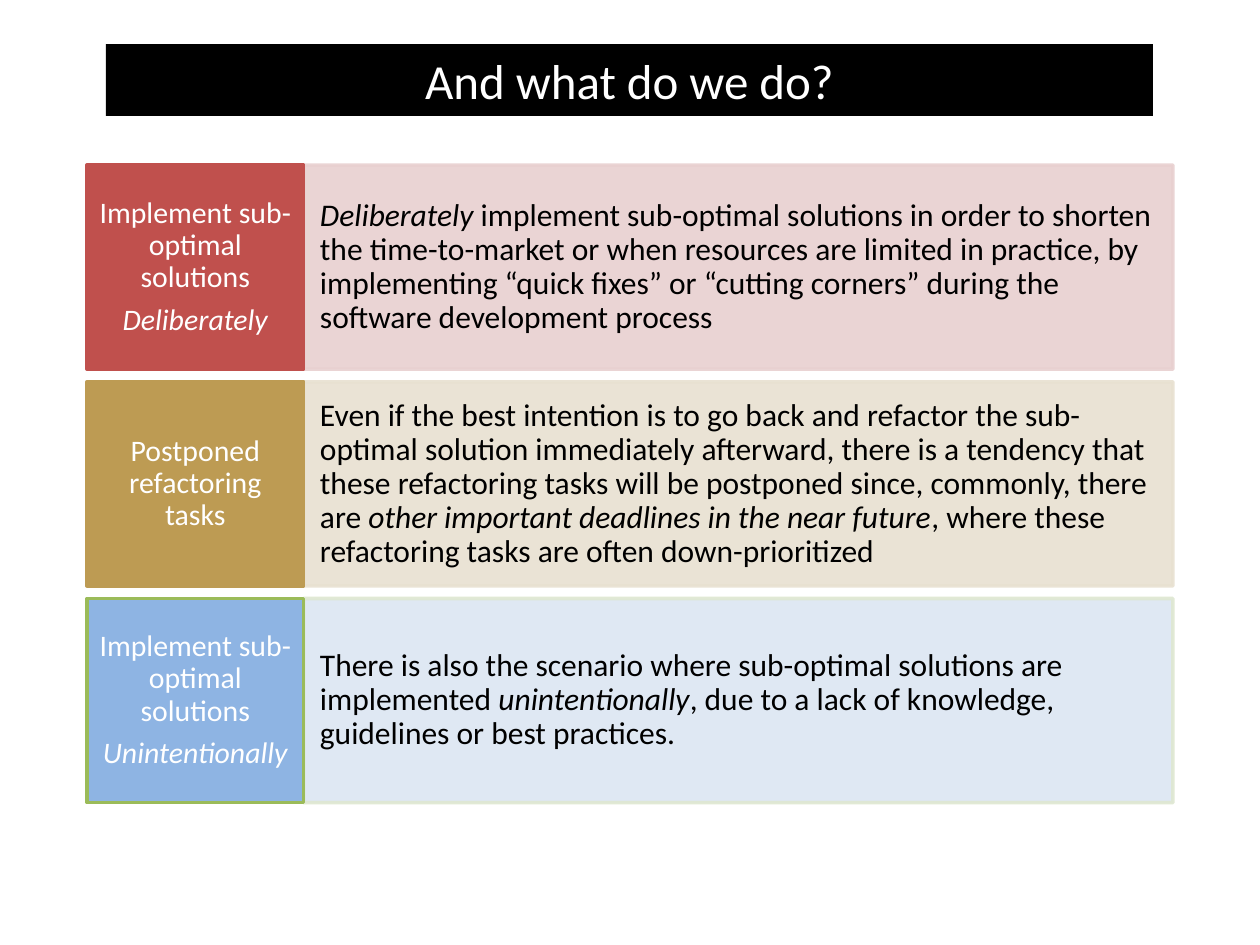
"""Build a slide with three labelled rows on how sub-optimal solutions arise."""
import lxml.etree
import pptx
import pptx.dml.color
import pptx.enum.shapes
import pptx.enum.text
import pptx.oxml.ns
import pptx.util
from pptx.util import Inches

RGBColor = pptx.dml.color.RGBColor
ALIGN = pptx.enum.text.PP_ALIGN

BLACK = RGBColor(0x00, 0x00, 0x00)
WHITE = RGBColor(0xFF, 0xFF, 0xFF)
RED = RGBColor(0xC0, 0x50, 0x4D)
PALE_RED = RGBColor(0xE8, 0xD0, 0xD0)
GOLD = RGBColor(0xBD, 0x9B, 0x53)
PALE_GOLD = RGBColor(0xE8, 0xE1, 0xD1)
BLUE = RGBColor(0x8E, 0xB4, 0xE3)
PALE_BLUE = RGBColor(0xDC, 0xE6, 0xF2)
GREEN = RGBColor(0x9B, 0xBB, 0x59)
PALE_GREEN = RGBColor(0xDE, 0xE7, 0xD1)

FONT = "Calibri"
LEFT, TOP = 0.69, 1.31
LABEL_WIDTH, DETAIL_WIDTH = 1.72, 6.9
ROW_HEIGHT, ROW_STEP = 1.62, 1.72


def write_text(shape, paragraphs, size, color, align, line_spacing=1.0, space_after=0, margin=0.1):
    """Fill a shape with paragraphs, each a list of (text, italic) runs."""
    frame = shape.text_frame
    frame.word_wrap = True
    frame.auto_size = pptx.enum.text.MSO_AUTO_SIZE.NONE
    frame.vertical_anchor = pptx.enum.text.MSO_ANCHOR.MIDDLE
    frame.margin_left = frame.margin_right = Inches(margin)
    frame.margin_top = frame.margin_bottom = Inches(0.05)
    for index, runs in enumerate(paragraphs):
        paragraph = frame.add_paragraph() if index else frame.paragraphs[0]
        paragraph.alignment = align
        paragraph.line_spacing = line_spacing
        paragraph.space_before = pptx.util.Pt(0)
        paragraph.space_after = pptx.util.Pt(space_after)
        for text, italic in runs:
            run = paragraph.add_run()
            run.text = text
            run.font.name = FONT
            run.font.size = pptx.util.Pt(size)
            run.font.italic = italic
            run.font.color.rgb = color


def add_box(slide, left, top, width, fill, line, opacity=100):
    """Add one rectangle of a row and return it."""
    shape = slide.shapes.add_shape(
        pptx.enum.shapes.MSO_SHAPE.RECTANGLE,
        Inches(left), Inches(top), Inches(width), Inches(ROW_HEIGHT))
    shape.shadow.inherit = False
    shape.fill.solid()
    shape.fill.fore_color.rgb = fill
    shape.line.color.rgb = line
    shape.line.width = pptx.util.Pt(2)
    if opacity < 100:
        for color in list(shape.element.spPr.iter(pptx.oxml.ns.qn("a:srgbClr"))):
            alpha = lxml.etree.SubElement(color, pptx.oxml.ns.qn("a:alpha"))
            alpha.set("val", str(opacity * 1000))
    return shape


rows = [
    {
        "label": [[("Implement sub-optimal solutions", False)], [("Deliberately", True)]],
        "detail": [
            ("Deliberately", True),
            (" implement sub-optimal solutions in order to shorten the time-to-market or when "
             "resources are limited in practice, by implementing “quick fixes” or “cutting "
             "corners” during the software development process", False),
        ],
        "label_colors": (RED, RED),
        "detail_colors": (PALE_RED, PALE_RED),
    },
    {
        "label": [[("Postponed refactoring tasks", False)]],
        "detail": [
            ("Even if the best intention is to go back and refactor the sub-optimal solution "
             "immediately afterward, there is a tendency that these refactoring tasks will be "
             "postponed since, commonly, there are ", False),
            ("other important deadlines in the near future", True),
            (", where these refactoring tasks are often down-prioritized", False),
        ],
        "label_colors": (GOLD, GOLD),
        "detail_colors": (PALE_GOLD, PALE_GOLD),
    },
    {
        "label": [[("Implement sub-optimal solutions", False)], [("Unintentionally", True)]],
        "detail": [
            ("There is also the scenario where sub-optimal solutions are implemented ", False),
            ("unintentionally", True),
            (", due to a lack of knowledge, guidelines or best practices.", False),
        ],
        "label_colors": (BLUE, GREEN),
        "detail_colors": (PALE_BLUE, PALE_GREEN),
    },
]

presentation = pptx.Presentation()
presentation.slide_width = Inches(10)
presentation.slide_height = Inches(7.5)
slide = presentation.slides.add_slide(presentation.slide_layouts.get_by_name("Title Only"))

title = slide.shapes.title
title.left, title.top = Inches(0.84), Inches(0.35)
title.width, title.height = Inches(8.31), Inches(0.57)
title.fill.solid()
title.fill.fore_color.rgb = BLACK
write_text(title, [[("And what do we do?", False)]], 28, WHITE, ALIGN.CENTER)

for index, row in enumerate(rows):
    top = TOP + index * ROW_STEP
    detail = add_box(slide, LEFT + LABEL_WIDTH, top, DETAIL_WIDTH, *row["detail_colors"], opacity=90)
    write_text(detail, [row["detail"]], 18, BLACK, ALIGN.LEFT,
               line_spacing=0.9, space_after=6, margin=0.13)
    label = add_box(slide, LEFT, top, LABEL_WIDTH, *row["label_colors"])
    write_text(label, row["label"], 17, WHITE, ALIGN.CENTER,
               line_spacing=0.9, space_after=6, margin=0.09)

presentation.save("out.pptx")
